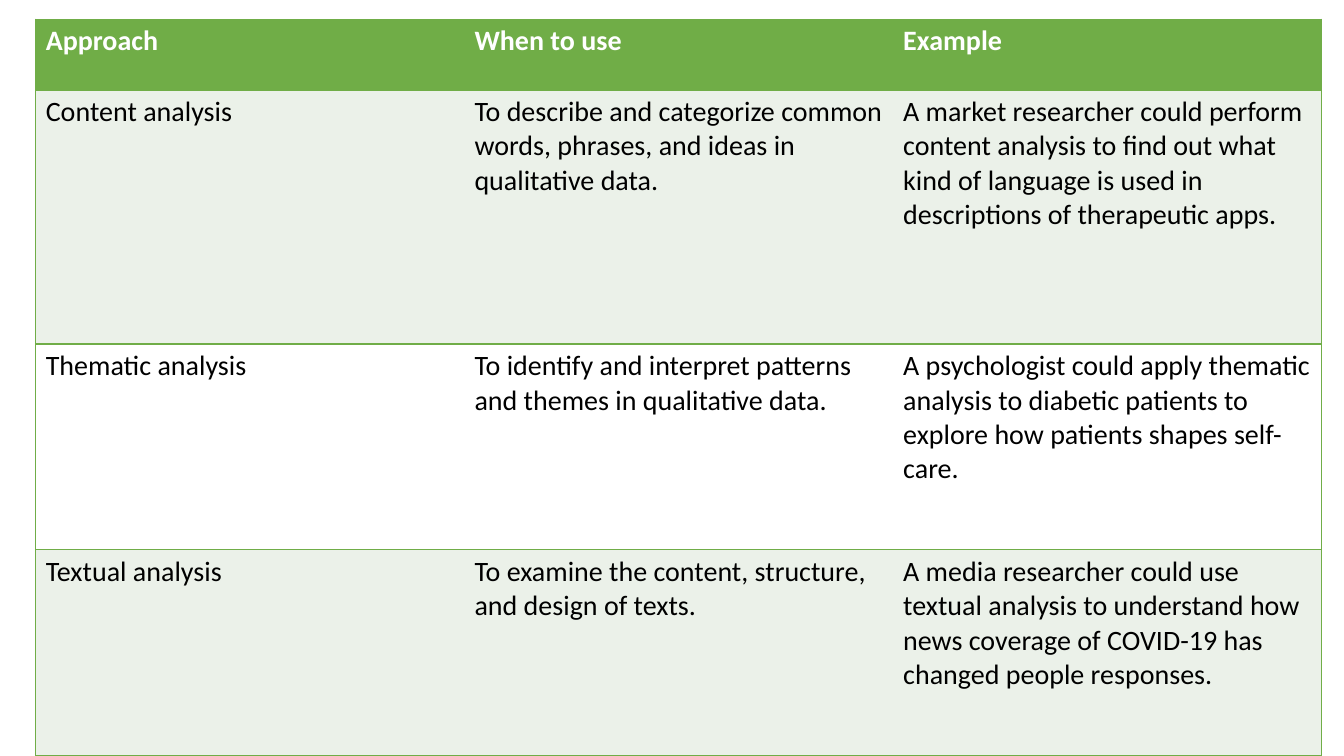
from lxml.etree import SubElement
from pptx import Presentation
from pptx.dml.color import RGBColor
from pptx.oxml.ns import qn
from pptx.util import Pt

ROWS = [
    ("Approach", "When to use", "Example"),
    ("Content analysis",
     "To describe and categorize common words, phrases, and ideas in qualitative data.",
     "A market researcher could perform content analysis to find out what kind of "
     "language is used in descriptions of therapeutic apps."),
    ("Thematic analysis",
     "To identify and interpret patterns and themes in qualitative data.",
     "A psychologist could apply thematic analysis to diabetic patients to explore "
     "how patients shapes self-care."),
    ("Textual analysis",
     "To examine the content, structure, and design of texts.",
     "A media researcher could use textual analysis to understand how news coverage "
     "of COVID-19 has changed people responses."),
]
COLORS = {"green": "70AD47", "pale": "EBF1E9", "white": "FFFFFF", "black": "000000"}
HEIGHTS = [50.5, 181.5, 147, 147]
LEFT, TOP, WIDTH = 25.5, 13.75, 918.75
HEAD = {"size": Pt(20), "name": "Calibri", "bold": True}
BODY = {**HEAD, "bold": False}


def rgb(name):
    return RGBColor.from_string(COLORS[name])


def border(cell, sides):
    """Draw green lines on the given sides and clear the others."""
    props = cell._tc.get_or_add_tcPr()
    for side in "LRTB":
        line = SubElement(props, qn(f"a:ln{side}"), w=str(Pt(1)))
        if side in sides:
            fill = SubElement(line, qn("a:solidFill"))
            SubElement(fill, qn("a:srgbClr"), val=COLORS["green"])
        else:
            SubElement(line, qn("a:noFill"))


def write(cell, text, style, ink, back):
    cell.text = text
    font = cell.text_frame.paragraphs[0].runs[0].font
    for key, value in style.items():
        setattr(font, key, value)
    font.color.rgb = rgb(ink)
    cell.fill.solid()
    cell.fill.fore_color.rgb = rgb(back)


def main():
    deck = Presentation()
    deck.slide_width, deck.slide_height = Pt(960), Pt(540)
    slide = deck.slides.add_slide(deck.slide_layouts[6])
    count = len(ROWS[0])
    table = slide.shapes.add_table(len(ROWS), count, Pt(LEFT), Pt(TOP),
                                   Pt(WIDTH), Pt(sum(HEIGHTS))).table
    for col in table.columns:
        col.width = Pt(WIDTH / count)
    for r, (texts, height) in enumerate(zip(ROWS, HEIGHTS)):
        table.rows[r].height = Pt(height)
        if r == 0:
            style, ink, back = HEAD, "white", "green"
        else:
            style, ink, back = BODY, "black", "pale" if r % 2 else "white"
        for c, text in enumerate(texts):
            cell = table.cell(r, c)
            border(cell, "TB" + "L" * (c == 0) + "R" * (c == count - 1))
            write(cell, text, style, ink, back)
    deck.save("out.pptx")


if __name__ == "__main__":
    main()
